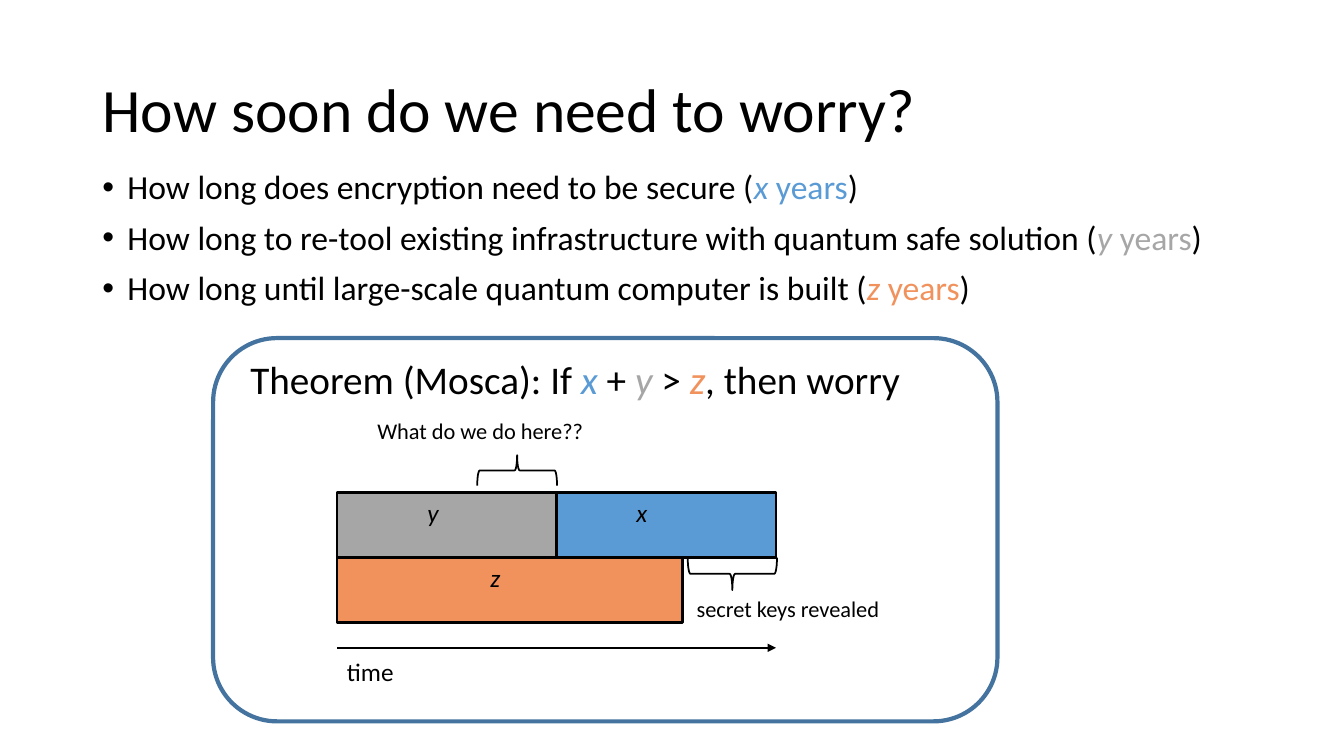
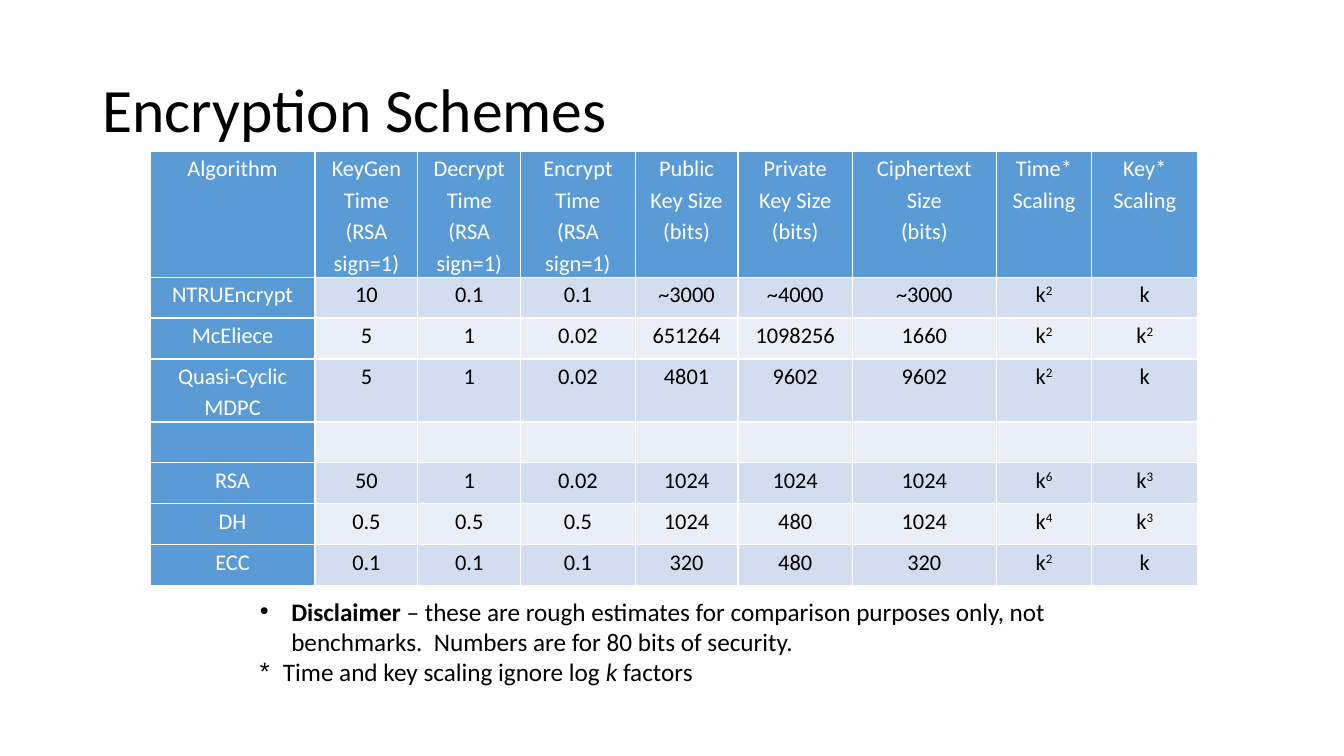
from lxml.etree import SubElement
from pptx import Presentation
from pptx.dml.color import RGBColor
from pptx.enum.shapes import MSO_CONNECTOR, MSO_SHAPE
from pptx.enum.text import MSO_ANCHOR, PP_ALIGN
from pptx.oxml.ns import qn
from pptx.util import Emu, Pt

# Shared look
FONT = "Calibri"
COLORS = {
    "black": "000000",
    "white": "FFFFFF",
    "blue": "5B9BD5",
    "gray": "A6A6A6",
    "orange": "F1925D",
    "frame": "43739E",
    "band_dark": "D2DEEF",
    "band_light": "EAEFF7",
}
TITLE_BOX = (88, 38, 1104, 139)
TITLE_ONLY = 5

# Table content: "^" marks a superscript, a line break starts a paragraph
SCHEMES = [
    ["Algorithm", "KeyGen Time\n(RSA sign=1)", "Decrypt Time\n(RSA sign=1)",
     "Encrypt Time\n(RSA sign=1)", "Public Key Size\n(bits)",
     "Private Key Size\n(bits)", "Ciphertext Size\n(bits)", "Time* Scaling",
     "Key*\nScaling"],
    ["NTRUEncrypt", "10", "0.1", "0.1", "~3000", "~4000", "~3000", "k^2", "k"],
    ["McEliece", "5", "1", "0.02", "651264", "1098256", "1660", "k^2", "k^2"],
    ["Quasi-Cyclic MDPC", "5", "1", "0.02", "4801", "9602", "9602", "k^2", "k"],
    [""] * 9,
    ["RSA", "50", "1", "0.02", "1024", "1024", "1024", "k^6", "k^3"],
    ["DH", "0.5", "0.5", "0.5", "1024", "480", "1024", "k^4", "k^3"],
    ["ECC", "0.1", "0.1", "0.1", "320", "480", "320", "k^2", "k"],
]
COLUMN_WIDTHS = [157, 98, 98, 109, 98, 109, 137, 91, 101]
ROW_HEIGHTS = [115, 39, 39, 57, 39, 39, 39, 39]


def px(length):
    """Turn px (96 to the inch) into EMU."""
    return Emu(length * 9525)


def box(left, top, width, height):
    return px(left), px(top), px(width), px(height)


def rgb(name):
    return RGBColor.from_string(COLORS[name])


# Text
def set_font(paragraph, size, color="black", italic=False):
    font = paragraph.font
    font.name = FONT
    font.size = Pt(size)
    font.bold = False
    font.italic = italic
    font.color.rgb = rgb(color)


def add_runs(paragraph, parts):
    """Each part is plain text or (text, style, color)."""
    for part in parts:
        text, style, color = (part, "", None) if isinstance(part, str) else part
        run = paragraph.add_run()
        run.text = text
        if style == "bold":
            run.font.bold = True
        if style == "italic":
            run.font.italic = True
        if style == "superscript":
            run.font._element.set("baseline", "30000")
        if color:
            run.font.color.rgb = rgb(color)


def set_bullet(paragraph, character, indent):
    properties = paragraph._p.get_or_add_pPr()
    properties.set("marL", str(px(indent)))
    properties.set("indent", str(-px(indent)))
    SubElement(properties, qn("a:buFont")).set("typeface", "Arial")
    SubElement(properties, qn("a:buChar")).set("char", character)


def add_text(slide, bounds, parts, size):
    frame = slide.shapes.add_textbox(*box(*bounds)).text_frame
    frame.word_wrap = True
    paragraph = frame.paragraphs[0]
    set_font(paragraph, size)
    add_runs(paragraph, parts)


def add_list(slide, bounds, items, size, line_spacing=1.0, space_before=0):
    """Each item is (bullet character, indent, parts)."""
    frame = slide.shapes.add_textbox(*box(*bounds)).text_frame
    frame.word_wrap = True
    for index, (character, indent, parts) in enumerate(items):
        paragraph = frame.add_paragraph() if index else frame.paragraphs[0]
        paragraph.line_spacing = line_spacing
        paragraph.space_before = Pt(space_before)
        set_bullet(paragraph, character, indent)
        set_font(paragraph, size)
        add_runs(paragraph, parts)


def add_titled_slide(presentation, text):
    slide = presentation.slides.add_slide(presentation.slide_layouts[TITLE_ONLY])
    title = slide.shapes.title
    title.left, title.top, title.width, title.height = box(*TITLE_BOX)
    title.text_frame.text = text
    title.text_frame.vertical_anchor = MSO_ANCHOR.MIDDLE
    paragraph = title.text_frame.paragraphs[0]
    paragraph.alignment = PP_ALIGN.LEFT
    paragraph.line_spacing = 0.9
    set_font(paragraph, 44)
    return slide


# Shapes
def add_outline(slide, kind, bounds, line_color, line_width, rotation=0):
    shape = slide.shapes.add_shape(kind, *box(*bounds))
    shape.shadow.inherit = False
    shape.fill.background()
    shape.line.color.rgb = rgb(line_color)
    shape.line.width = Pt(line_width)
    shape.rotation = rotation
    return shape


def add_bar(slide, bounds, color, letter, letter_indent):
    bar = add_outline(slide, MSO_SHAPE.RECTANGLE, bounds, "black", 1.75)
    bar.fill.solid()
    bar.fill.fore_color.rgb = rgb(color)
    frame = bar.text_frame
    frame.vertical_anchor = MSO_ANCHOR.TOP
    frame.margin_left = px(letter_indent)
    paragraph = frame.paragraphs[0]
    paragraph.alignment = PP_ALIGN.LEFT
    set_font(paragraph, 18, italic=True)
    add_runs(paragraph, [letter])


def add_arrow(slide, left, right, y):
    arrow = slide.shapes.add_connector(
        MSO_CONNECTOR.STRAIGHT, px(left), px(y), px(right), px(y))
    arrow.line.color.rgb = rgb("black")
    arrow.line.width = Pt(1.75)
    SubElement(arrow.line._get_or_add_ln(), qn("a:tailEnd")).set("type", "triangle")
    SubElement(arrow._element.spPr, qn("a:effectLst"))


# Table
def add_cell_borders(cell):
    properties = cell._tc.get_or_add_tcPr()
    for index, side in enumerate(("a:lnL", "a:lnR", "a:lnT", "a:lnB")):
        line = properties.makeelement(qn(side), {"w": str(Pt(1))})
        fill = SubElement(line, qn("a:solidFill"))
        SubElement(fill, qn("a:srgbClr")).set("val", COLORS["white"])
        properties.insert(index, line)


def fill_cell(cell, text, fill, color):
    cell.fill.solid()
    cell.fill.fore_color.rgb = rgb(fill)
    cell.margin_left = cell.margin_right = px(8)
    cell.margin_top = cell.margin_bottom = 0
    add_cell_borders(cell)
    for index, line in enumerate(text.split("\n")):
        frame = cell.text_frame
        paragraph = frame.add_paragraph() if index else frame.paragraphs[0]
        paragraph.alignment = PP_ALIGN.CENTER
        paragraph.line_spacing = 1.15
        set_font(paragraph, 16, color)
        base, _, exponent = line.partition("^")
        parts = [base] if base else []
        if exponent:
            parts.append((exponent, "superscript", None))
        add_runs(paragraph, parts)


def add_scheme_table(slide, left, top):
    bounds = box(left, top, sum(COLUMN_WIDTHS), sum(ROW_HEIGHTS))
    table = slide.shapes.add_table(len(SCHEMES), len(COLUMN_WIDTHS), *bounds).table
    table.first_col = True
    table.horz_banding = False
    for column, width in zip(table.columns, COLUMN_WIDTHS):
        column.width = px(width)
    for row_index, values in enumerate(SCHEMES):
        table.rows[row_index].height = px(ROW_HEIGHTS[row_index])
        band = "band_dark" if row_index % 2 else "band_light"
        for column_index, text in enumerate(values):
            heading = row_index == 0 or column_index == 0
            fill, color = ("blue", "white") if heading else (band, "black")
            fill_cell(table.cell(row_index, column_index), text, fill, color)


# Slides
def build_worry_slide(presentation):
    slide = add_titled_slide(presentation, "How soon do we need to worry?")
    questions = [
        ("How long does encryption need to be secure (", "x", "blue"),
        ("How long to re-tool existing infrastructure with quantum safe solution (",
         "y", "gray"),
        ("How long until large-scale quantum computer is built (", "z", "orange"),
    ]
    items = [("•", 24, [question, (letter, "italic", color), (" years", "", color), ")"])
             for question, letter, color in questions]
    add_list(slide, (88, 158, 1104, 150), items, 24, 0.9, 10)

    # Theorem
    add_outline(slide, MSO_SHAPE.ROUNDED_RECTANGLE, (203, 322, 747, 365), "frame", 3)
    theorem = ["Theorem (Mosca): If ", ("x", "italic", "blue"), " + ",
               ("y", "italic", "gray"), " > ", ("z", "italic", "orange"),
               ", then worry"]
    add_text(slide, (229, 334, 658, 55), theorem, 28)

    # Time bars
    left, top, width, height = 321, 469, 209, 62
    add_bar(slide, (left + width, top, width, height), "blue", "x", 76)
    add_bar(slide, (left, top, width, height), "gray", "y", 86)
    add_bar(slide, (left, top + height, 329, height), "orange", "z", 146)
    add_arrow(slide, left, left + 2 * width, 617)
    add_text(slide, (left, 620, 171, 38), ["time"], 18)

    # Braces and their labels
    add_outline(slide, MSO_SHAPE.LEFT_BRACE, (682, 504, 31, 85), "black", 1.25, 270)
    add_outline(slide, MSO_SHAPE.LEFT_BRACE, (478, 410, 29, 76), "black", 1.25, 90)
    add_text(slide, (350, 393, 428, 36), ["What do we do here??"], 16)
    add_text(slide, (654, 562, 280, 36), ["secret keys revealed"], 16)


def build_schemes_slide(presentation):
    slide = add_titled_slide(presentation, "Encryption Schemes")
    add_scheme_table(slide, 143, 144)
    notes = [
        ("•", 30, [("Disclaimer", "bold", None),
                   " – these are rough estimates for comparison purposes only, not "
                   "benchmarks.  Numbers are for 80 bits of security."]),
        ("*", 22, ["Time and key scaling ignore log ", ("k", "italic", None),
                   " factors"]),
    ]
    add_list(slide, (238, 563, 808, 97), notes, 18)


def main():
    presentation = Presentation()
    presentation.slide_width, presentation.slide_height = px(1280), px(720)
    build_worry_slide(presentation)
    build_schemes_slide(presentation)
    presentation.save("out.pptx")


if __name__ == "__main__":
    main()
